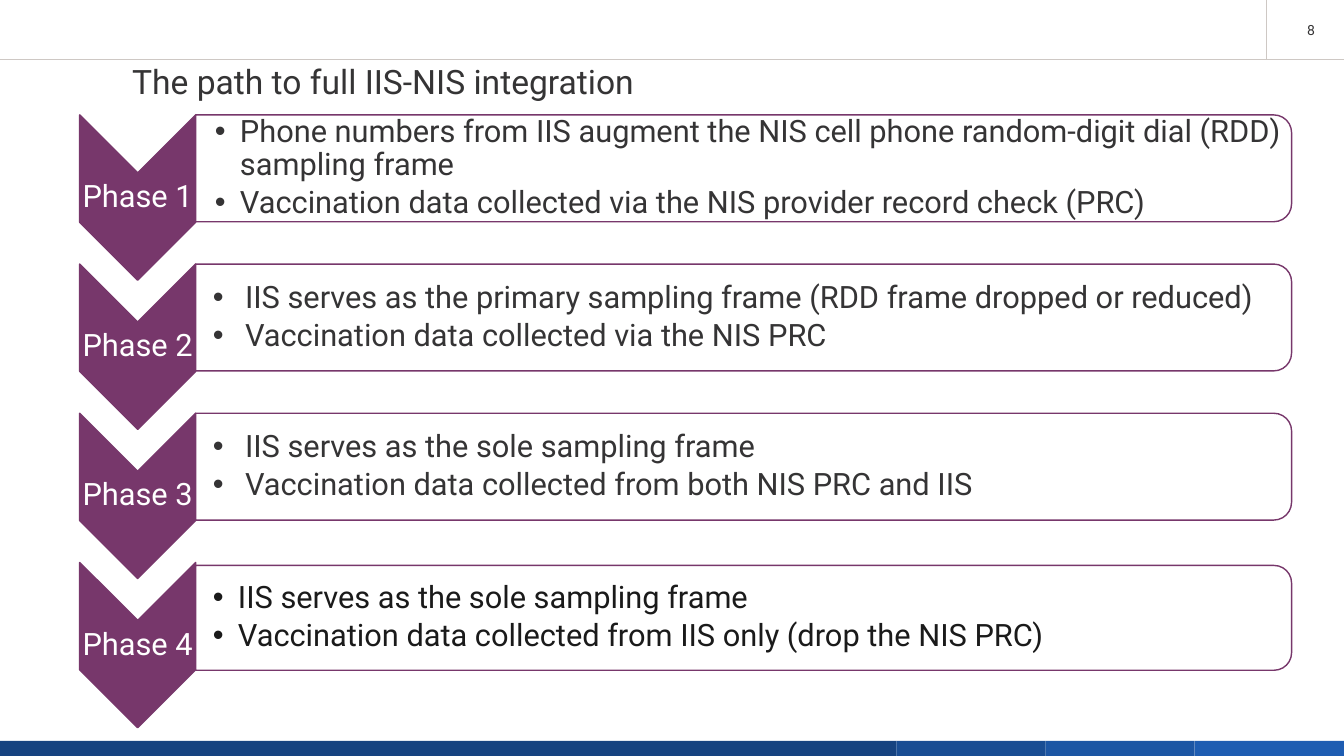
from lxml import etree
from pptx import Presentation
from pptx.dml.color import RGBColor
from pptx.enum.shapes import MSO_CONNECTOR, MSO_SHAPE
from pptx.enum.text import MSO_ANCHOR, MSO_AUTO_SIZE, PP_ALIGN
from pptx.oxml.ns import qn
from pptx.util import Inches, Pt

CHEVRON, ROUNDED = MSO_SHAPE.CHEVRON, MSO_SHAPE.ROUND_2_SAME_RECTANGLE
RECTANGLE, STRAIGHT = MSO_SHAPE.RECTANGLE, MSO_CONNECTOR.STRAIGHT
TOP, MIDDLE = MSO_ANCHOR.TOP, MSO_ANCHOR.MIDDLE
LEFT, CENTER, RIGHT = PP_ALIGN.LEFT, PP_ALIGN.CENTER, PP_ALIGN.RIGHT

# Content
TITLE = "The path to full IIS-NIS integration"
PAGE_NUMBER = "8"
INK, BLACK, WHITE, PURPLE, GRAY = "353435", "1A1A1A", "FFFFFF", "77376B", "CEC8C4"
# label, bullets, text colour, left inset, bullet indent, panel top, panel height
PHASES = [
    ("Phase 1", ["Phone numbers from IIS augment the NIS cell phone random-digit dial (RDD) sampling frame",
                 "Vaccination data collected via the NIS provider record check (PRC)"],
     INK, 0.19, 0.25, 1.14, 1.06),
    ("Phase 2", ["IIS serves as the primary sampling frame (RDD frame dropped or reduced)",
                 "Vaccination data collected via the NIS PRC"],
     INK, 0.17, 0.32, 2.62, 1.06),
    ("Phase 3", ["IIS serves as the sole sampling frame",
                 "Vaccination data collected from both NIS PRC and IIS"],
     INK, 0.17, 0.32, 4.10, 1.06),
    ("Phase 4", ["IIS serves as the sole sampling frame",
                 "Vaccination data collected from IIS only (drop the NIS PRC)"],
     BLACK, 0.17, 0.25, 5.61, 1.04),
]
FOOTER_COLORS = ["164380", "194D93", "1C56A4", "1E5DB2"]

# Layout in inches
WIDTH, HEIGHT = 13.33, 7.5
HEADER_HEIGHT, NUMBER_LEFT = 0.59, 12.56
FOOTER_TOP, FOOTER_STEP = 7.35, 1.48
CHEVRON_LEFT, CHEVRON_WIDTH, CHEVRON_HEIGHT = 0.79, 1.15, 1.64
FIRST_TOP, PHASE_STEP = 1.14, 1.48
PANEL_LEFT, PANEL_WIDTH = CHEVRON_LEFT + CHEVRON_WIDTH, 10.87


def color(value):
    return RGBColor.from_string(value)


def place(shape, left, top, width, height):
    shape.left, shape.top = Inches(left), Inches(top)
    shape.width, shape.height = Inches(width), Inches(height)


def add_block(slide, kind, box, fill, line=None, rotated=False):
    """Draw a preset shape whose visible bounds are box, optionally turned 90 degrees."""
    left, top, width, height = box
    if rotated:
        left, top = left + (width - height) / 2, top + (height - width) / 2
        width, height = height, width
    shape = slide.shapes.add_shape(kind, *map(Inches, (left, top, width, height)))
    shape.rotation = 90 if rotated else 0
    shape.shadow.inherit = False
    shape.fill.solid()
    shape.fill.fore_color.rgb = color(fill)
    if line:
        shape.line.color.rgb = color(line)
        shape.line.width = Pt(1)
    else:
        shape.line.fill.background()


def add_line(slide, *points):
    line = slide.shapes.add_connector(STRAIGHT, *map(Inches, points))
    line.line.color.rgb = color(GRAY)
    line.line.width = Pt(0.65)
    etree.SubElement(line._element.spPr, qn("a:effectLst"))


def add_bullet(paragraph, indent):
    properties = paragraph._p.get_or_add_pPr()
    properties.set("marL", str(Inches(indent)))
    properties.set("indent", str(-Inches(indent)))
    etree.SubElement(properties, qn("a:buFont")).set("typeface", "Arial")
    etree.SubElement(properties, qn("a:buChar")).set("char", "•")


def write(shape, lines, size, ink, align=LEFT, anchor=TOP, insets=(0.1, 0.05, 0.1, 0.05),
          spacing=1.0, after=0, indent=None):
    frame = shape.text_frame
    frame.word_wrap, frame.auto_size = True, MSO_AUTO_SIZE.NONE
    frame.vertical_anchor = anchor
    frame.margin_left, frame.margin_top, frame.margin_right, frame.margin_bottom = map(Inches, insets)
    frame.text = "\n".join(lines)
    for paragraph in frame.paragraphs:
        paragraph.alignment, paragraph.line_spacing = align, spacing
        paragraph.space_before, paragraph.space_after = Pt(0), Pt(after)
        if indent:
            add_bullet(paragraph, indent)
        for run in paragraph.runs:
            run.font.size, run.font.name = Pt(size), "Roboto"
            run.font.color.rgb = color(ink)


def add_text(slide, box, lines, size, ink, **style):
    write(slide.shapes.add_textbox(*map(Inches, box)), lines, size, ink, **style)


presentation = Presentation()
presentation.slide_width, presentation.slide_height = Inches(WIDTH), Inches(HEIGHT)
slide = presentation.slides.add_slide(presentation.slide_layouts[5])

# Header rules and page number
add_line(slide, 0, HEADER_HEIGHT, WIDTH, HEADER_HEIGHT)
add_line(slide, NUMBER_LEFT, 0, NUMBER_LEFT, HEADER_HEIGHT)
add_text(slide, (12.64, 0.16, 0.5, 0.27), [PAGE_NUMBER], 10, INK, align=RIGHT)

# Footer band: one long bar, then equal steps to the right edge
edges = [0] + [WIDTH - FOOTER_STEP * count for count in (3, 2, 1, 0)]
for fill, start, end in zip(FOOTER_COLORS, edges, edges[1:]):
    add_block(slide, RECTANGLE, (start, FOOTER_TOP, end - start, HEIGHT - FOOTER_TOP), fill)

# Phases: chevron with label, panel with bullets
for index, (label, bullets, ink, inset, indent, panel_top, panel_height) in enumerate(PHASES):
    top = FIRST_TOP + PHASE_STEP * index
    add_block(slide, CHEVRON, (CHEVRON_LEFT, top, CHEVRON_WIDTH, CHEVRON_HEIGHT),
              PURPLE, PURPLE, rotated=True)
    add_text(slide, (CHEVRON_LEFT, top + CHEVRON_WIDTH / 2, CHEVRON_WIDTH, 0.49), [label], 22, WHITE,
             align=CENTER, anchor=MIDDLE, insets=(0.02,) * 4, spacing=0.9)
    add_block(slide, ROUNDED, (PANEL_LEFT, panel_top, PANEL_WIDTH, panel_height),
              WHITE, PURPLE, rotated=True)
    add_text(slide, (PANEL_LEFT, panel_top + 0.05, PANEL_WIDTH - 0.06, panel_height - 0.1), bullets, 22, ink,
             anchor=MIDDLE, insets=(inset, 0.02, 0.02, 0.02), spacing=0.9, after=3.3, indent=indent)

# Title
title = slide.shapes.title
place(title, 1.21, 0.55, 5.91, 0.55)
write(title, [TITLE], 24, INK)

presentation.save("out.pptx")
